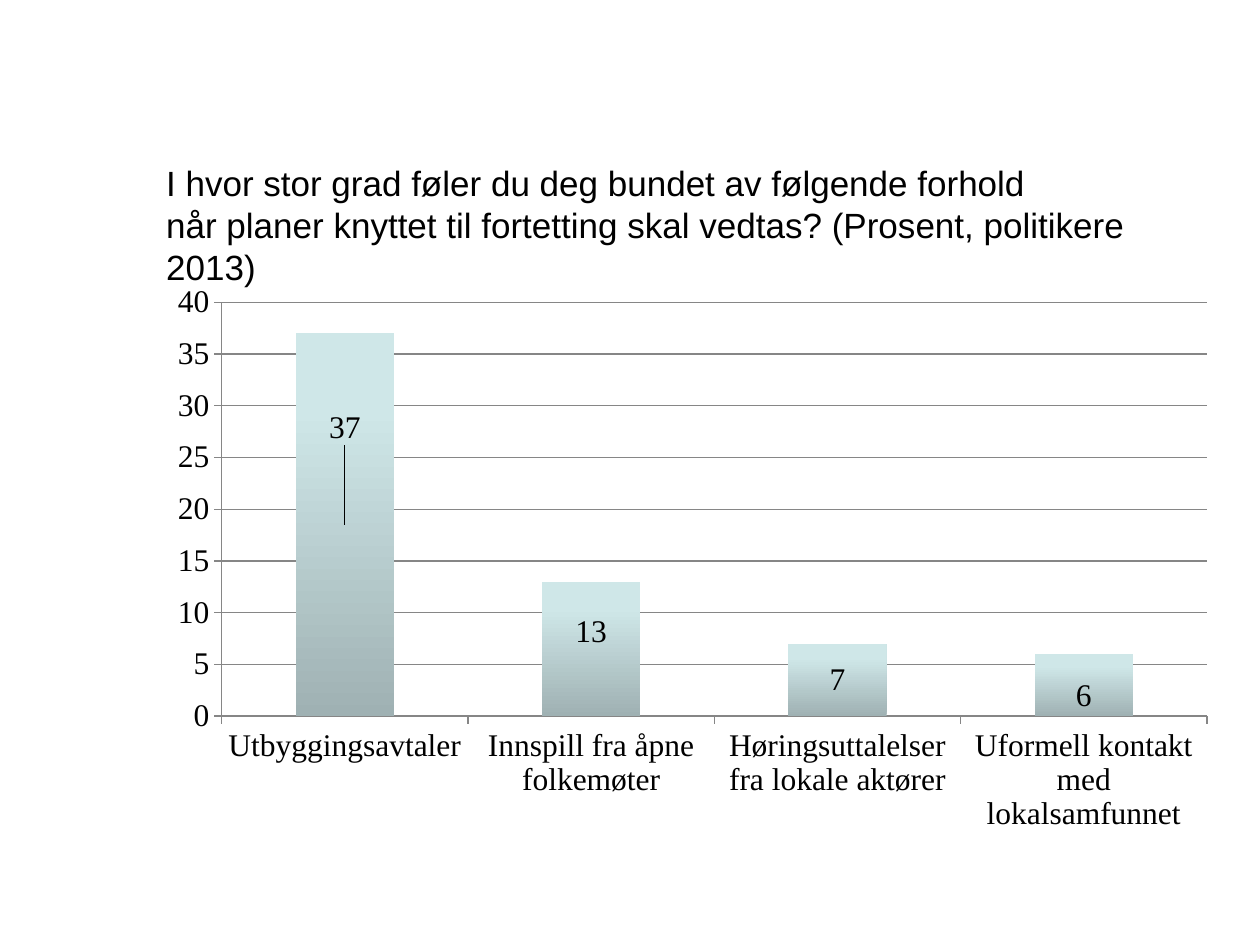
from lxml import etree
from pptx import Presentation
from pptx.chart.data import CategoryChartData
from pptx.dml.color import RGBColor
from pptx.enum.chart import XL_CHART_TYPE, XL_LABEL_POSITION, XL_TICK_MARK
from pptx.oxml.ns import qn
from pptx.util import Inches, Pt

COLUMN = XL_CHART_TYPE.COLUMN_CLUSTERED
CENTER = XL_LABEL_POSITION.CENTER
OUTSIDE, NO_TICK = XL_TICK_MARK.OUTSIDE, XL_TICK_MARK.NONE

QUESTION = (
    "I hvor stor grad føler du deg bundet av følgende forhold\v"
    "når planer knyttet til fortetting skal vedtas? (Prosent, politikere 2013)"
)
ANSWERS = [
    ("Utbyggingsavtaler", 37, -0.17),
    ("Innspill fra åpne folkemøter", 13, -0.03),
    ("Høringsuttalelser fra lokale aktører", 7, 0),
    ("Uformell kontakt med lokalsamfunnet", 6, 0.02),
]
COLORS = {"text": "000000", "line": "868686", "bar_top": "CFE7E8", "bar_bottom": "9FB1B3"}
PLOT = {"x": 0.06, "y": 0.05, "w": 0.92, "h": 0.73}
WIDTH, HEIGHT = Inches(10), Inches(7.5)
QUESTION_BOX = (0.122, 0.164, 0.855, 0.103)
CHART_BOX = (0.125, 0.29, 0.85, 0.6)


def color(name):
    return RGBColor.from_string(COLORS[name])


def place(box):
    return [int(share * side) for share, side in zip(box, (WIDTH, HEIGHT) * 2)]


def format_font(font, size, name):
    font.size = Pt(size)
    font.name = name
    font.color.rgb = color("text")


def add_text(slide, text, box, size, font):
    frame = slide.shapes.add_textbox(*place(box)).text_frame
    frame.word_wrap = True
    paragraph = frame.paragraphs[0]
    paragraph.text = text
    for run in paragraph.runs:
        format_font(run.font, size, font)


def insert_layout(parent, index, **settings):
    for existing in parent.findall(qn("c:layout")):
        parent.remove(existing)
    layout = etree.Element(qn("c:layout"))
    manual = etree.SubElement(layout, qn("c:manualLayout"))
    for tag, value in settings.items():
        etree.SubElement(manual, qn(f"c:{tag}")).set("val", str(value))
    parent.insert(index, layout)


def style_axis(axis):
    axis.major_tick_mark = OUTSIDE
    axis.minor_tick_mark = NO_TICK
    axis.format.line.color.rgb = color("line")
    axis.format.line.width = Pt(0.75)


def style_bars(series):
    series.invert_if_negative = False
    fill = series.format.fill
    fill.gradient()
    fill.gradient_angle = 90
    stops = zip(fill.gradient_stops, ("bar_bottom", "bar_top"), (0, 0.8))
    for stop, name, position in stops:
        stop.color.rgb = color(name)
        stop.position = position


def add_labels(series):
    for index, (_, _, shift) in enumerate(ANSWERS):
        label = series.points[index].data_label
        format_font(label.font, 18, "Times New Roman")
        label.position = CENTER
        element = series.data_labels._element.findall(qn("c:dLbl"))[index]
        insert_layout(element, 1, x=0, y=shift)
    series.data_labels.show_value = True


def add_answer_chart(slide):
    data = CategoryChartData()
    data.categories = [name for name, _, _ in ANSWERS]
    data.add_series("Series 1", [value for _, value, _ in ANSWERS])
    chart = slide.shapes.add_chart(COLUMN, *place(CHART_BOX), data).chart
    format_font(chart.font, 18, "Times New Roman")
    chart.has_legend = False
    chart.has_title = False
    style_axis(chart.category_axis)
    style_axis(chart.value_axis)
    chart.value_axis.minimum_scale = 0
    chart.value_axis.maximum_scale = 40
    chart.value_axis.major_unit = 5
    gridline = chart.value_axis.major_gridlines.format.line
    gridline.color.rgb = color("line")
    gridline.width = Pt(0.75)
    plot = chart.plots[0]
    plot.gap_width = 150
    plot.vary_by_categories = False
    style_bars(plot.series[0])
    add_labels(plot.series[0])
    area = chart.element.find(f".//{qn('c:plotArea')}")
    insert_layout(area, 0, layoutTarget="inner", xMode="edge", yMode="edge", **PLOT)


def main():
    presentation = Presentation()
    presentation.slide_width, presentation.slide_height = WIDTH, HEIGHT
    slide = presentation.slides.add_slide(presentation.slide_layouts[6])
    add_answer_chart(slide)
    add_text(slide, QUESTION, QUESTION_BOX, size=20, font="Arial")
    presentation.save("out.pptx")


if __name__ == "__main__":
    main()
